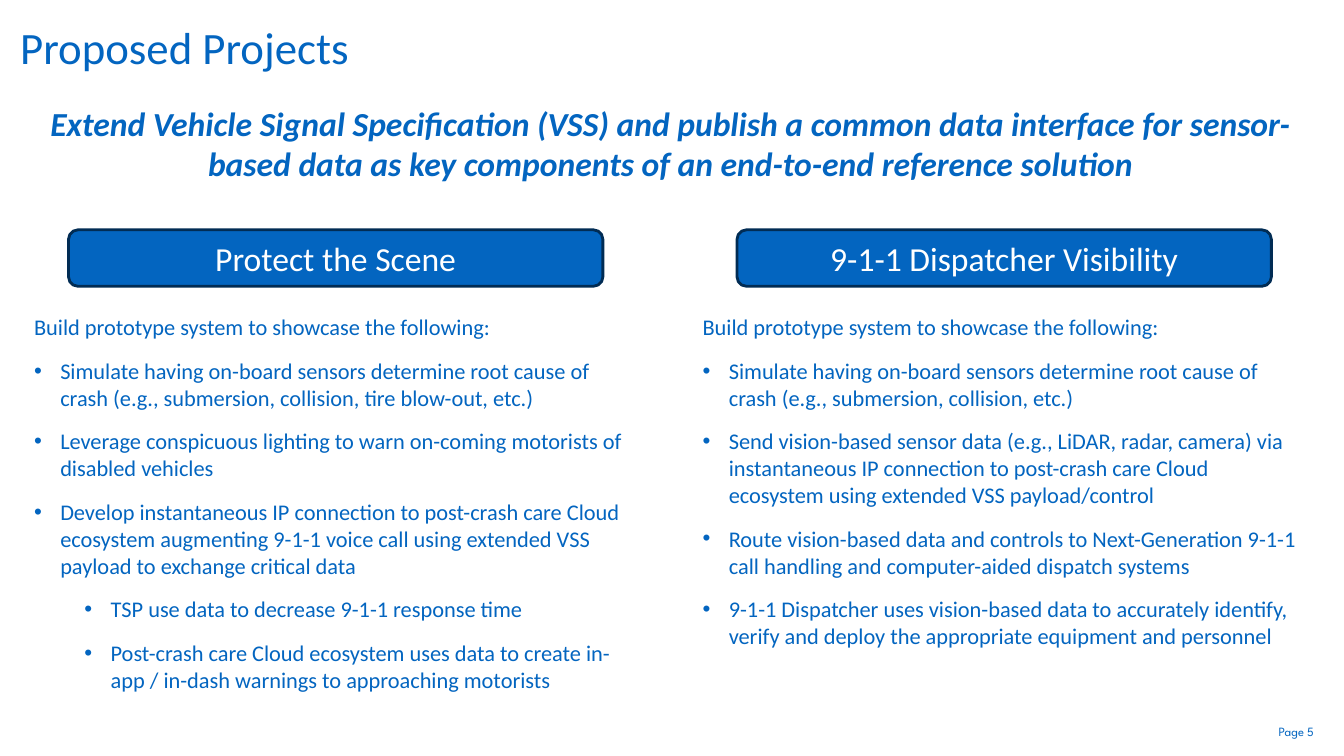
from dataclasses import dataclass

from lxml import etree
from pptx import Presentation
from pptx.dml.color import RGBColor
from pptx.enum.shapes import MSO_SHAPE
from pptx.enum.text import MSO_ANCHOR, PP_ALIGN
from pptx.oxml.ns import qn
from pptx.util import Inches, Pt

LEFT, CENTER, RIGHT = PP_ALIGN.LEFT, PP_ALIGN.CENTER, PP_ALIGN.RIGHT
TOP, MIDDLE = MSO_ANCHOR.TOP, MSO_ANCHOR.MIDDLE
ROUNDED = MSO_SHAPE.ROUNDED_RECTANGLE
GRID = 100
DEFAULT_INSETS = (0.1, 0.05, 0.1, 0.05)


@dataclass(frozen=True)
class Theme:
    blue: RGBColor = RGBColor(0x03, 0x65, 0xC0)
    navy: RGBColor = RGBColor(0x01, 0x2C, 0x54)
    white: RGBColor = RGBColor(0xFF, 0xFF, 0xFF)
    body_font: str = "Calibri"
    page_font: str = "League Spartan"
    title_size: int = 32
    heading_size: int = 24
    body_size: int = 16
    page_size: int = 9
    paragraph_gap: int = 12
    hanging: float = 0.26
    level_step: float = 0.5


class SlideBuilder:
    def __init__(self, presentation, theme):
        self.theme = theme
        self.column = presentation.slide_width / GRID
        self.row = presentation.slide_height / GRID
        self.slide = presentation.slides.add_slide(presentation.slide_layouts[6])

    def place(self, left, top, width, height):
        return (round(left * self.column), round(top * self.row),
                round(width * self.column), round(height * self.row))

    def style(self, paragraph, size, color, font=None, align=LEFT, strong=False):
        paragraph.alignment = align
        paragraph.font.size = Pt(size)
        paragraph.font.name = font or self.theme.body_font
        paragraph.font.color.rgb = color
        if strong:
            paragraph.font.bold = True
            paragraph.font.italic = True

    def frame(self, area, insets=DEFAULT_INSETS):
        frame = self.slide.shapes.add_textbox(*self.place(*area)).text_frame
        frame.word_wrap = True
        frame.vertical_anchor = TOP
        (frame.margin_left, frame.margin_top,
         frame.margin_right, frame.margin_bottom) = map(Inches, insets)
        return frame

    def text(self, area, content, size, insets=DEFAULT_INSETS, **style):
        paragraph = self.frame(area, insets).paragraphs[0]
        paragraph.text = content
        self.style(paragraph, size, self.theme.blue, **style)

    def banner(self, area, content):
        shape = self.slide.shapes.add_shape(ROUNDED, *self.place(*area))
        shape.shadow.inherit = False
        shape.fill.solid()
        shape.fill.fore_color.rgb = self.theme.blue
        shape.line.color.rgb = self.theme.navy
        shape.line.width = Pt(2)
        shape.text_frame.vertical_anchor = MIDDLE
        paragraph = shape.text_frame.paragraphs[0]
        paragraph.text = content
        self.style(paragraph, self.theme.heading_size, self.theme.white, align=CENTER)

    def bullet(self, paragraph, level):
        paragraph.level = level
        properties = paragraph._p.get_or_add_pPr()
        indent = self.theme.hanging + level * self.theme.level_step
        properties.set("marL", str(Inches(indent)))
        properties.set("indent", str(-Inches(self.theme.hanging)))
        etree.SubElement(properties, qn("a:buFont")).set("typeface", "Arial")
        etree.SubElement(properties, qn("a:buChar")).set("char", "•")

    def bullet_list(self, area, intro, items):
        frame = self.frame(area)
        for index, (level, content) in enumerate([(None, intro), *items]):
            paragraph = frame.add_paragraph() if index else frame.paragraphs[0]
            paragraph.text = content
            if level is not None:
                self.bullet(paragraph, level)
            paragraph.space_after = Pt(self.theme.paragraph_gap)
            self.style(paragraph, self.theme.body_size, self.theme.blue)


INTRO = "Build prototype system to showcase the following:"
PROJECTS = [
    ("Protect the Scene", 52, [
        (0, "Simulate having on-board sensors determine root cause of crash "
            "(e.g., submersion, collision, tire blow-out, etc.)"),
        (0, "Leverage conspicuous lighting to warn on-coming motorists of disabled vehicles"),
        (0, "Develop instantaneous IP connection to post-crash care Cloud ecosystem "
            "augmenting 9-1-1 voice call using extended VSS payload to exchange critical data"),
        (1, "TSP use data to decrease 9-1-1 response time"),
        (1, "Post-crash care Cloud ecosystem uses data to create in-app / in-dash "
            "warnings to approaching motorists"),
    ]),
    ("9-1-1 Dispatcher Visibility", 46.27, [
        (0, "Simulate having on-board sensors determine root cause of crash "
            "(e.g., submersion, collision, etc.)"),
        (0, "Send vision-based sensor data (e.g., LiDAR, radar, camera) via instantaneous "
            "IP connection to post-crash care Cloud ecosystem using extended VSS payload/control"),
        (0, "Route vision-based data and controls to Next-Generation 9-1-1 call handling "
            "and computer-aided dispatch systems"),
        (0, "9-1-1 Dispatcher uses vision-based data to accurately identify, verify and "
            "deploy the appropriate equipment and personnel"),
    ]),
]
MARGIN = 1.8
PROJECT_PITCH = 49.74
BANNER_OFFSET = 3.3


def main():
    presentation = Presentation()
    presentation.slide_width = Inches(13.33)
    presentation.slide_height = Inches(7.5)
    theme = Theme()
    builder = SlideBuilder(presentation, theme)

    builder.text((89.05, 95.07, 10.95, 3.33), "Page 5", theme.page_size,
                 insets=(0.1, 0.05, 0.3, 0.05), font=theme.page_font, align=RIGHT)
    builder.text((1.05, 1.87, 97.07, 8.8), "Proposed Projects", theme.title_size,
                 insets=(0.06,) * 4)
    builder.text((MARGIN, 12.93, 96.17, 12.13),
                 "Extend Vehicle Signal Specification (VSS) and publish a common data interface "
                 "for sensor-based data as key components of an end-to-end reference solution",
                 theme.heading_size, align=CENTER, strong=True)

    for index, (heading, height, items) in enumerate(PROJECTS):
        left = MARGIN + index * PROJECT_PITCH
        builder.banner((left + BANNER_OFFSET, 30.4, 39.76, 7.47), heading)
        builder.bullet_list((left, 40.8, 46.44, height), INTRO, items)

    presentation.save("out.pptx")


if __name__ == "__main__":
    main()
